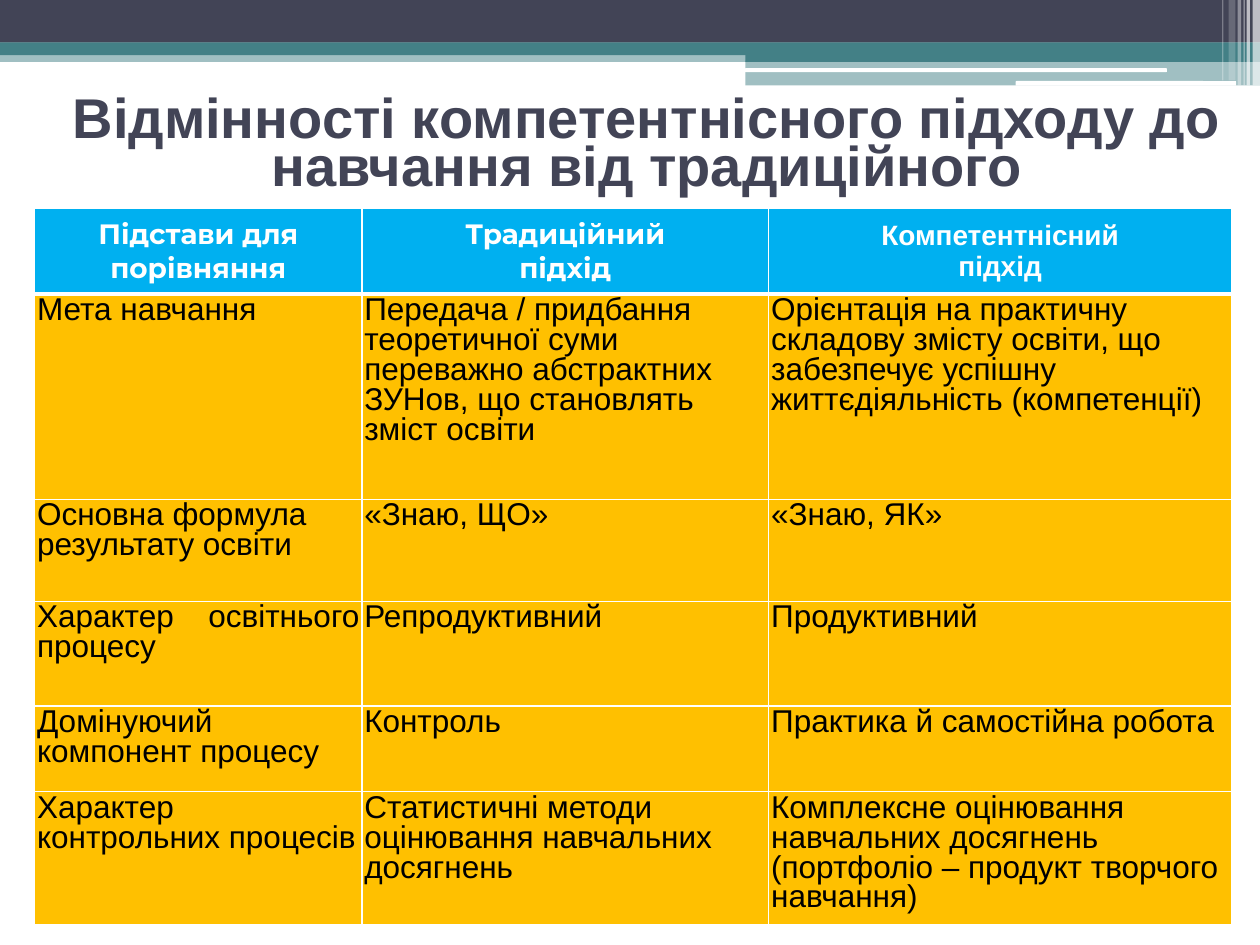
from dataclasses import dataclass

import pptx
import pptx.dml.color
import pptx.enum.shapes
import pptx.enum.text
import pptx.oxml
import pptx.oxml.ns
import pptx.util
from lxml import etree

Pt = pptx.util.Pt
Align = pptx.enum.text.PP_ALIGN
Anchor = pptx.enum.text.MSO_ANCHOR
Shape = pptx.enum.shapes.MSO_SHAPE
qn = pptx.oxml.ns.qn


@dataclass(frozen=True)
class Theme:
    dark: str = "424456"
    teal: str = "438086"
    white: str = "FFFFFF"
    black: str = "000000"
    header: str = "00B0F0"
    body: str = "FFC000"
    font: str = "Arial"
    header_font: str = "Montserrat"
    title_size: float = 32
    header_size: float = 16
    body_size: float = 18


@dataclass(frozen=True)
class Band:
    left: float
    top: float
    width: float
    height: float
    color: str
    opacity: int = 100
    rounded: bool = False


@dataclass(frozen=True)
class TextStyle:
    font: str
    size: float
    color: str
    bold: bool = False
    align: Align = Align.LEFT
    spacing: float | pptx.util.Length | None = None


@dataclass(frozen=True)
class Row:
    """A body row; justified holds the indexes of its justified columns."""
    height: float
    cells: tuple[str, str, str]
    justified: tuple[int, ...]


THEME = Theme()

BANDS = [
    Band(0, 28.8, 720, 6.6, THEME.teal, 50),
    Band(0, 0, 720, 24.4, THEME.dark),
    Band(0, 24.3, 720, 7.2, THEME.teal),
    Band(426, 28.2, 294, 7.2, THEME.teal),
    Band(426, 34.6, 294, 14.2, THEME.teal, 50),
    Band(425.6, 39, 241.2, 2.2, THEME.white, rounded=True),
    Band(580.4, 46.3, 126, 2.7, THEME.white, rounded=True),
]
# Left, width, height and opacity of the upright stripes in the corner
STRIPES = [
    (715.8, 4.2, 48.8, 65),
    (712.3, 2, 48.8, 65),
    (710.6, 0.7, 48.8, 60),
    (707.2, 2, 48.8, 40),
    (702, 4, 46, 20),
    (698.4, 0.7, 46, 30),
]

TITLE = "Відмінності компетентнісного підходу до навчання від традиційного"
COLUMN_WIDTHS = (187, 232.5, 264.5)
HEADER_HEIGHT = 49
HEADERS = (
    ("Підстави для порівняння", THEME.header_font),
    ("Традиційний\nпідхід", THEME.header_font),
    ("Компетентнісний\nпідхід", THEME.font),
)
ROWS = [
    Row(117.4, ("Мета навчання",
                "Передача / придбання теоретичної суми переважно абстрактних "
                "ЗУНов, що становлять зміст освіти",
                "Орієнтація на практичну складову змісту освіти, що забезпечує "
                "успішну життєдіяльність (компетенції)"), (0,)),
    Row(58.3, ("Основна формула результату освіти",
               "«Знаю, ЩО»", "«Знаю, ЯК»"), (1, 2)),
    Row(59.8, ("Характер освітнього процесу",
               "Репродуктивний", "Продуктивний"), (0, 1, 2)),
    Row(49, ("Домінуючий компонент процесу",
             "Контроль", "Практика й самостійна робота"), (0, 1, 2)),
    Row(72, ("Характер контрольних процесів",
             "Статистичні методи оцінювання навчальних досягнень",
             "Комплексне оцінювання навчальних досягнень (портфоліо – продукт "
             "творчого навчання)"), (0,)),
]


def rgb(color: str) -> pptx.dml.color.RGBColor:
    return pptx.dml.color.RGBColor.from_string(color)


def draw_band(page, band: Band) -> None:
    kind = Shape.ROUNDED_RECTANGLE if band.rounded else Shape.RECTANGLE
    shape = page.shapes.add_shape(
        kind, Pt(band.left), Pt(band.top), Pt(band.width), Pt(band.height))
    shape.shadow.inherit = False
    shape.line.fill.background()
    shape.fill.solid()
    shape.fill.fore_color.rgb = rgb(band.color)
    if band.opacity < 100:
        color = shape.fill._xPr.find(".//" + qn("a:srgbClr"))
        etree.SubElement(color, qn("a:alpha"), val=str(band.opacity * 1000))


def write_text(frame, text: str, style: TextStyle) -> None:
    """Fill the frame with one paragraph per line of text."""
    frame.word_wrap = True
    for index, line in enumerate(text.split("\n")):
        para = frame.add_paragraph() if index else frame.paragraphs[0]
        para.text = line
        para.alignment = style.align
        para.line_spacing = style.spacing
        para.font.name = style.font
        para.font.size = Pt(style.size)
        para.font.bold = style.bold
        para.font.color.rgb = rgb(style.color)


def draw_title(page) -> None:
    box = page.shapes.add_textbox(Pt(19.4), Pt(49), Pt(700.6), Pt(73.4))
    box.text_frame.vertical_anchor = Anchor.MIDDLE
    write_text(box.text_frame, TITLE, TextStyle(
        THEME.font, THEME.title_size, THEME.dark, True, Align.CENTER, Pt(27)))


def set_borders(cell, top: float, bottom: float) -> None:
    properties = cell._tc.get_or_add_tcPr()
    widths = {"lnL": 1, "lnR": 1, "lnT": top, "lnB": bottom}
    for index, (side, width) in enumerate(widths.items()):
        line = etree.Element(qn(f"a:{side}"), w=str(Pt(width)))
        fill = etree.SubElement(line, qn("a:solidFill"))
        etree.SubElement(fill, qn("a:srgbClr"), val=THEME.white)
        properties.insert(index, line)


def fill_cell(cell, text: str, style: TextStyle, color: str,
              top: float = 1, bottom: float = 1) -> None:
    cell.margin_left = cell.margin_right = Pt(1.4)
    cell.margin_top = cell.margin_bottom = Pt(1.4)
    cell.fill.solid()
    cell.fill.fore_color.rgb = rgb(color)
    set_borders(cell, top, bottom)
    write_text(cell.text_frame, text, style)


def draw_table(page) -> None:
    heights = [HEADER_HEIGHT, *(row.height for row in ROWS)]
    table = page.shapes.add_table(
        len(heights), len(COLUMN_WIDTHS), Pt(19.8), Pt(119),
        Pt(sum(COLUMN_WIDTHS)), Pt(sum(heights))).table
    for column, width in zip(table.columns, COLUMN_WIDTHS):
        column.width = Pt(width)
    for table_row, height in zip(table.rows, heights):
        table_row.height = Pt(height)

    for column, (text, font) in enumerate(HEADERS):
        cell = table.cell(0, column)
        cell.vertical_anchor = Anchor.MIDDLE
        style = TextStyle(font, THEME.header_size, THEME.white, True, Align.CENTER)
        fill_cell(cell, text, style, THEME.header, bottom=3)

    for number, row in enumerate(ROWS, start=1):
        for column, text in enumerate(row.cells):
            align = Align.JUSTIFY if column in row.justified else Align.LEFT
            style = TextStyle(THEME.font, THEME.body_size, THEME.black,
                              align=align, spacing=0.85)
            fill_cell(table.cell(number, column), text, style, THEME.body,
                      top=3 if number == 1 else 1)


def main() -> None:
    deck = pptx.Presentation()
    deck.slide_width, deck.slide_height = Pt(720), Pt(540)
    page = deck.slides.add_slide(deck.slide_layouts[6])
    for band in BANDS:
        draw_band(page, band)
    for left, width, height, opacity in STRIPES:
        draw_band(page, Band(left, 0, width, height, THEME.white, opacity))
    draw_title(page)
    draw_table(page)
    deck.save("out.pptx")


if __name__ == "__main__":
    main()
